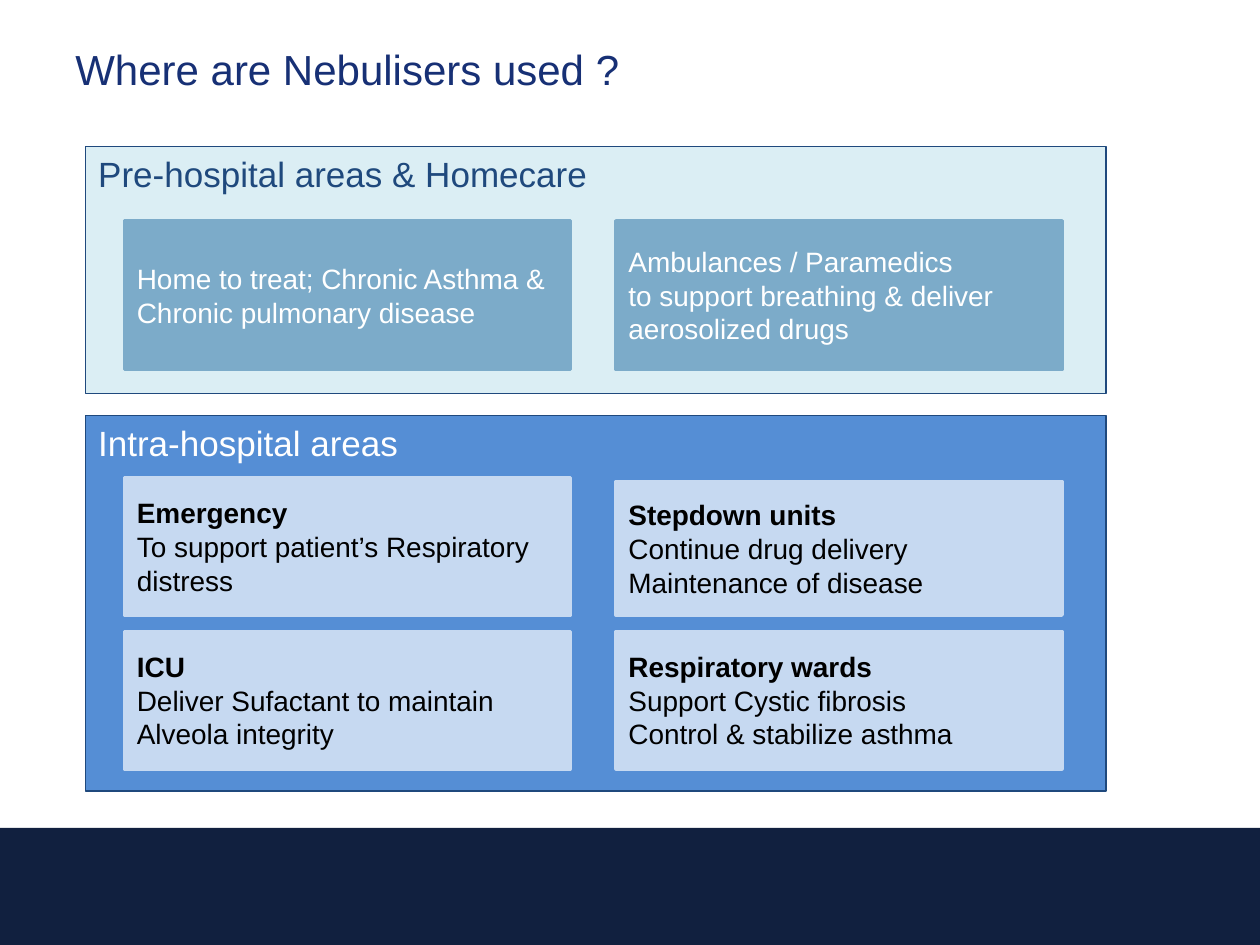
from pptx import Presentation
from pptx.dml.color import RGBColor
from pptx.enum.shapes import MSO_SHAPE
from pptx.enum.text import MSO_ANCHOR, PP_ALIGN
from pptx.util import Cm, Pt

RECT = MSO_SHAPE.RECTANGLE
TOP, MID = MSO_ANCHOR.TOP, MSO_ANCHOR.MIDDLE
LEFT = PP_ALIGN.LEFT
FONT = "Arial"
HEX = {
    "title": "173075", "foot": "11203F", "edge": "1F497D",
    "pale": "DBEEF4", "blue": "558ED5", "steel": "7CABC9",
    "ice": "C6D9F1", "white": "FFFFFF", "black": "000000",
}

TITLE = "Where are Nebulisers used ?"
# heading, top, height, fill, heading colour
PANELS = [
    ("Pre-hospital areas & Homecare", 2.95, 4.98, "pale", "edge"),
    ("Intra-hospital areas", 8.38, 7.57, "blue", "white"),
]
# column, top, bottom, bold heading or None, lines
CARDS = [
    (0, 4.45, 7.45, None, ["Home to treat; Chronic Asthma & Chronic pulmonary disease"]),
    (1, 4.45, 7.45, None, ["Ambulances / Paramedics",
                           "to support breathing & deliver aerosolized drugs"]),
    (0, 9.63, 12.4, "Emergency", ["To support patient’s Respiratory distress"]),
    (1, 9.71, 12.4, "Stepdown units", ["Continue drug delivery", "Maintenance of disease"]),
    (0, 12.73, 15.5, "ICU", ["Deliver Sufactant to maintain Alveola integrity"]),
    (1, 12.73, 15.5, "Respiratory wards", ["Support Cystic fibrosis",
                                           "Control & stabilize asthma"]),
]
PANEL_X, PANEL_W = 1.73, 20.57
CARD_X, CARD_W, STEP = 2.51, 8.99, 9.91


def color(name):
    return RGBColor.from_string(HEX[name])


def write(shape, lines, size, ink, anchor=TOP, wrap=True):
    """Fill the shape with (text, bold) lines."""
    frame = shape.text_frame
    frame.word_wrap = wrap
    frame.vertical_anchor = anchor
    for i, (text, bold) in enumerate(lines):
        para = frame.add_paragraph() if i else frame.paragraphs[0]
        para.alignment = LEFT
        run = para.add_run()
        run.text = text
        font = run.font
        font.name, font.size, font.bold = FONT, Pt(size), bold
        font.color.rgb = color(ink)


def block(slide, x, y, w, h, fill, edge=None, width=0.75):
    shape = slide.shapes.add_shape(RECT, Cm(x), Cm(y), Cm(w), Cm(h))
    shape.shadow.inherit = False
    shape.fill.solid()
    shape.fill.fore_color.rgb = color(fill)
    if edge:
        shape.line.color.rgb = color(edge)
        shape.line.width = Pt(width)
    else:
        shape.line.fill.background()
    return shape


def main():
    deck = Presentation()
    deck.slide_width, deck.slide_height = Cm(25.4), Cm(19.05)
    slide = deck.slides.add_slide(deck.slide_layouts[6])

    block(slide, 0, 16.69, 25.4, 2.36, "foot")
    title = slide.shapes.add_textbox(Cm(1.27), Cm(0.76), Cm(22.86), Cm(1.88))
    write(title, [(TITLE, False)], 24, "title")

    for head, top, high, fill, ink in PANELS:
        panel = block(slide, PANEL_X, top, PANEL_W, high, fill, "edge")
        write(panel, [(head, False)], 20, ink, wrap=False)

    for col, top, base, head, lines in CARDS:
        fill, ink = ("ice", "black") if head else ("steel", "white")
        card = block(slide, CARD_X + col * STEP, top, CARD_W, base - top, fill, fill, 2)
        rows = [(head, True)] if head else []
        rows += [(line, False) for line in lines]
        write(card, rows, 16, ink, MID)

    deck.save("out.pptx")


if __name__ == "__main__":
    main()
